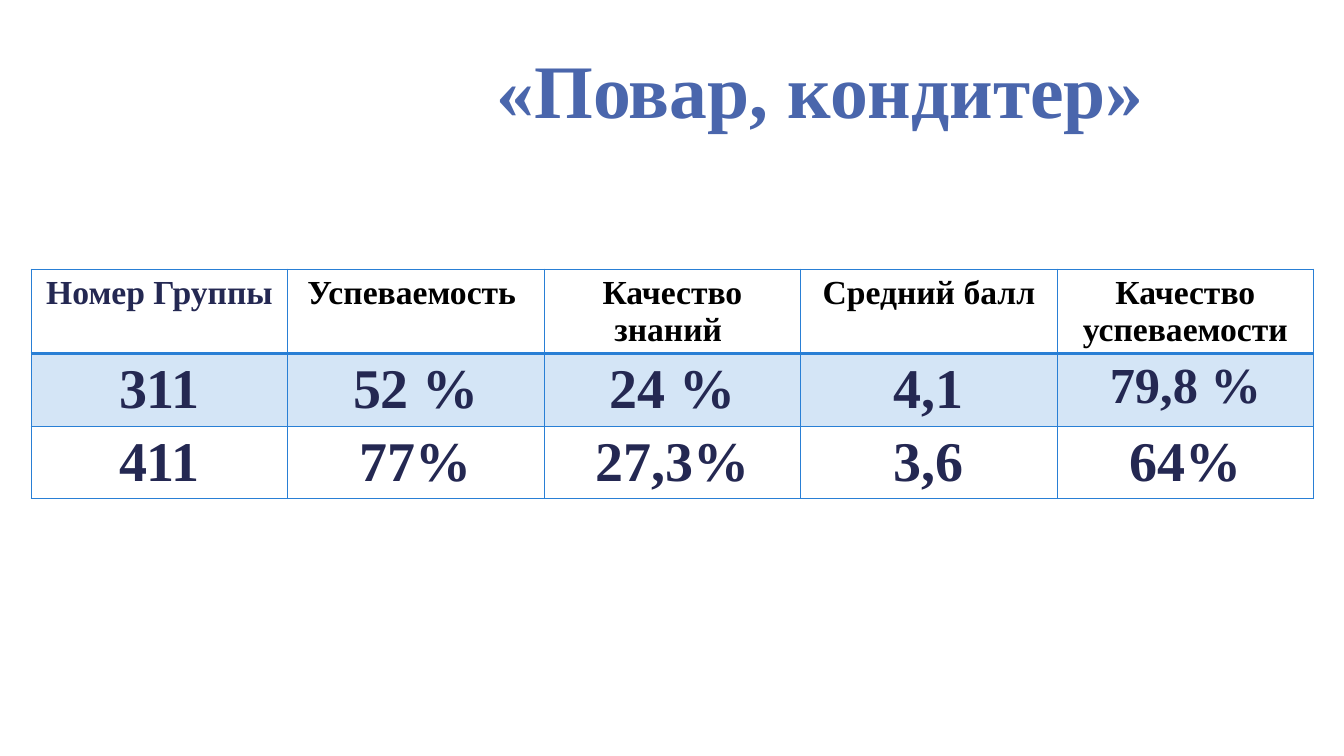
from lxml import etree
from pptx import Presentation
from pptx.dml.color import RGBColor
from pptx.enum.text import MSO_ANCHOR, PP_ALIGN
from pptx.oxml.ns import qn
from pptx.util import Inches, Pt

CENTER = PP_ALIGN.CENTER
MIDDLE = MSO_ANCHOR.MIDDLE

TITLE_BLUE = RGBColor(0x4A, 0x66, 0xAC)
NAVY = RGBColor(0x24, 0x28, 0x52)
BLACK = RGBColor(0x00, 0x00, 0x00)
ACCENT = RGBColor(0x29, 0x7F, 0xD5)

FONT = "Times New Roman"
TITLE_ONLY = 5
WIDTH, HEIGHT = 13.33, 7.5

HEADERS = ["Номер Группы", "Успеваемость ", "Качество знаний ",
           "Средний балл", "Качество успеваемости"]
RESULTS = [
    ["311", "52 %", "24 %", "4,1", "79,8 %"],
    ["411", "77%", "27,3%", "3,6", "64%"],
]
SMALLER_VALUE = "79,8 %"
ROW_HEIGHTS = [0.83, 0.72, 0.72]


class Page:
    """Holds the style and the current slide; places by shares of its size."""

    def __init__(self, deck):
        self.deck = deck
        self.slide = deck.slides.add_slide(deck.slide_layouts[TITLE_ONLY])

    def across(self, share):
        return int(self.deck.slide_width * share)

    def down(self, share):
        return int(self.deck.slide_height * share)

    def add_text(self, para, text, size, color):
        para.alignment = CENTER
        span = para.add_run()
        span.text = text
        span.font.name = FONT
        span.font.size = Pt(size)
        span.font.bold = True
        span.font.color.rgb = color

    def title(self, text, left, top, width, height):
        box = self.slide.shapes.title
        box.left, box.top = self.across(left), self.down(top)
        box.width, box.height = self.across(width), self.down(height)
        box.text_frame.vertical_anchor = MIDDLE
        box.text_frame.word_wrap = True
        para = box.text_frame.paragraphs[0]
        para.line_spacing = 0.9
        self.add_text(para, text, 54, TITLE_BLUE)

    def table(self, rows, heights, left, top, width):
        frame = self.slide.shapes.add_table(
            len(rows), len(rows[0]), self.across(left), self.down(top),
            self.across(width), Inches(sum(heights)))
        table = frame.table
        table.horz_banding = False
        for row, height in zip(table.rows, heights):
            row.height = Inches(height)
        for row_index, texts in enumerate(rows):
            for column_index, text in enumerate(texts):
                cell = table.cell(row_index, column_index)
                self.borders(cell, row_index)
                self.shade(cell, row_index == 1)
                if row_index == 0:
                    size = 24
                    color = BLACK if column_index else NAVY
                else:
                    size = 36 if text == SMALLER_VALUE else 40
                    color = NAVY
                self.add_text(cell.text_frame.paragraphs[0], text, size, color)

    def borders(self, cell, row_index):
        # The rule between the header and the results is twice as thick
        widths = {"lnL": 1, "lnR": 1,
                  "lnT": 2 if row_index == 1 else 1,
                  "lnB": 2 if row_index == 0 else 1}
        properties = cell._tc.get_or_add_tcPr()
        for side, width in widths.items():
            line = etree.SubElement(properties, qn("a:" + side), w=str(Pt(width)))
            fill = etree.SubElement(line, qn("a:solidFill"))
            etree.SubElement(fill, qn("a:srgbClr"), val=str(ACCENT))

    def shade(self, cell, tinted):
        if not tinted:
            cell.fill.background()
            return
        cell.fill.solid()
        cell.fill.fore_color.rgb = ACCENT
        tint = cell._tc.tcPr.find(qn("a:solidFill")).find(qn("a:srgbClr"))
        etree.SubElement(tint, qn("a:alpha"), val="20000")


def main():
    deck = Presentation()
    deck.slide_width, deck.slide_height = Inches(WIDTH), Inches(HEIGHT)
    page = Page(deck)

    # Heading
    page.title("«Повар, кондитер»", 3.17 / WIDTH, 0.21 / HEIGHT,
               9.93 / WIDTH, 1.45 / HEIGHT)

    # Results by group
    page.table([HEADERS] + RESULTS, ROW_HEIGHTS,
               0.31 / WIDTH, 2.67 / HEIGHT, 12.72 / WIDTH)

    deck.save("out.pptx")


if __name__ == "__main__":
    main()
